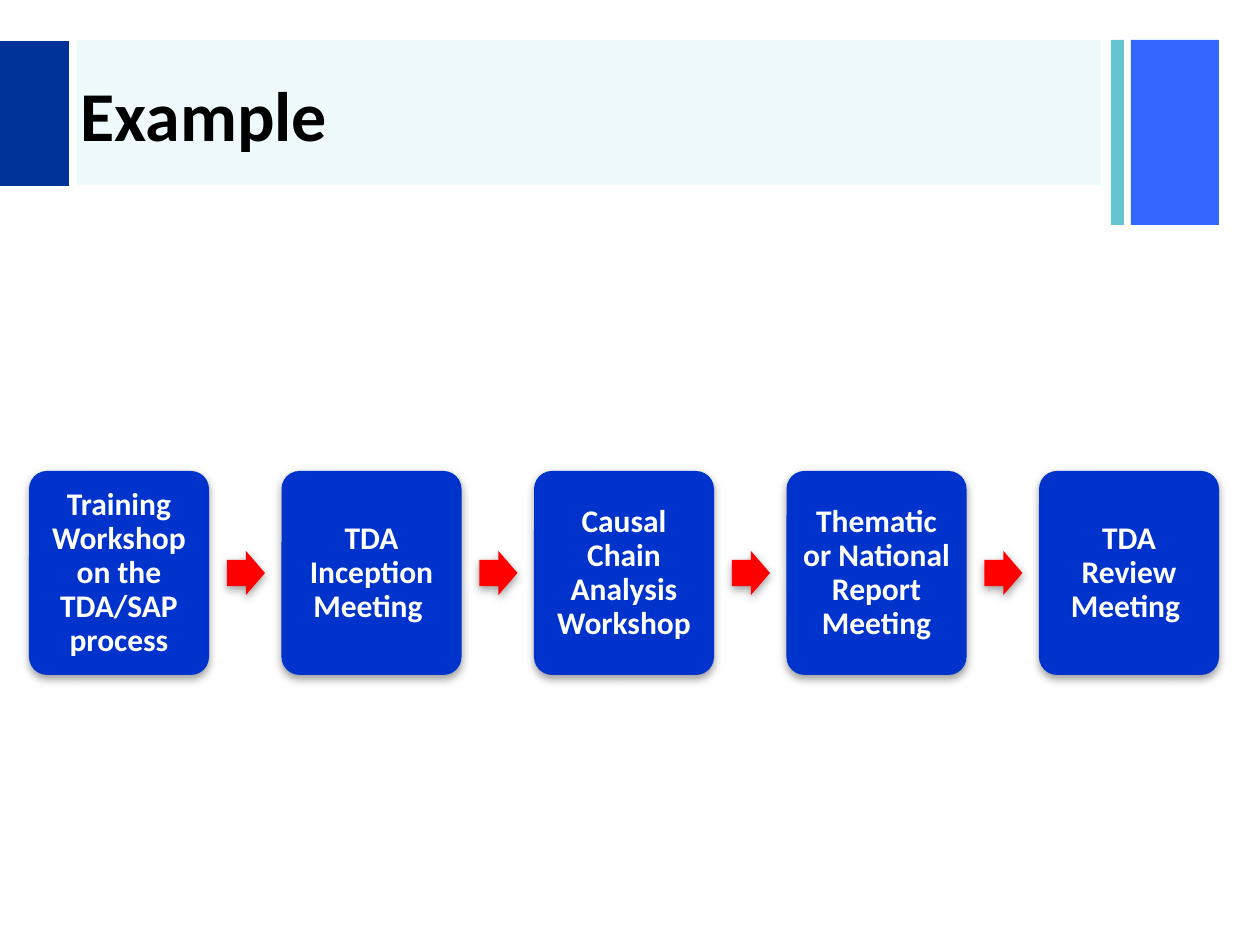
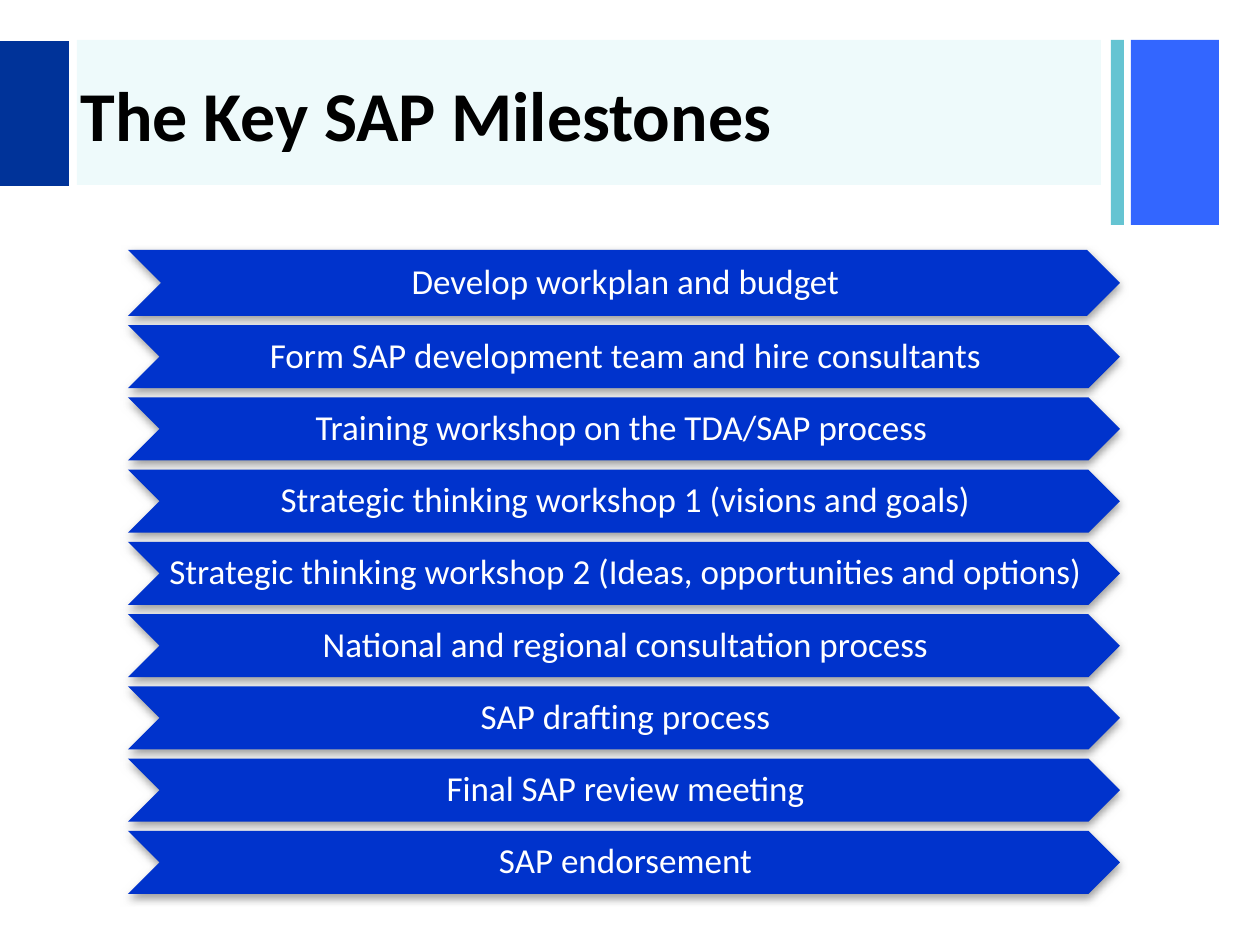
"""Build two slides on the milestones of the TDA and SAP processes."""
from lxml.etree import SubElement
from pptx import Presentation
from pptx.dml.color import RGBColor
from pptx.enum.shapes import MSO_SHAPE
from pptx.enum.text import MSO_ANCHOR, MSO_AUTO_SIZE, PP_ALIGN
from pptx.oxml.ns import qn
from pptx.util import Emu, Inches, Pt

PIXELS_PER_INCH = 126
FONT = "Calibri"
COLORS = {
    "black": "000000", "white": "FFFFFF", "box": "0033CC", "arrow": "FF0000",
    "navy": "003399", "blue": "3366FF", "teal": "65C4D2", "tint": "14C5D0",
    "shadow": "808080",
}

EXAMPLE_TITLE = "Example"
EXAMPLE_STEPS = [
    "Training Workshop on the TDA/SAP process",
    "TDA Inception Meeting ",
    "Causal Chain Analysis Workshop",
    "Thematic or National Report Meeting",
    "TDA Review Meeting ",
]
MILESTONES_TITLE = "The Key SAP Milestones"
MILESTONES = [
    "Develop workplan and budget",
    "Form SAP development team and hire consultants",
    "Training workshop on the TDA/SAP process ",
    "Strategic thinking workshop 1 (visions and goals)",
    "Strategic thinking workshop 2 (Ideas, opportunities and options)",
    "National and regional consultation process",
    "SAP drafting process",
    "Final SAP review meeting",
    "SAP endorsement",
]

BANDS = [
    ((1131, 40, 88, 185), "blue", 100),
    ((1111, 40, 13, 185), "teal", 100),
    ((77, 40, 1024, 145), "tint", 7),
    ((0, 41, 69, 145), "navy", 100),
]
TITLE_BOX = (68, 43, 1042, 141)
STEP_LEFT, STEP_RIGHT, STEP_TOP = 29, 1219, 471
STEP_WIDTH, STEP_HEIGHT = 180, 204
ARROW_OFFSET, ARROW_WIDTH, ARROW_HEIGHT = 18, 38, 44
ROW_LEFT, ROW_TOP, ROW_BOTTOM, ROW_WIDTH = 128, 250, 894, 992
FIRST_ROW_HEIGHT, ROW_HEIGHT = 66, 63


def px(length):
    """Turn pixels into EMU."""
    return Emu(round(length * Inches(1) / PIXELS_PER_INCH))


def place(shape, box):
    """Move and size a shape to a box in pixels."""
    shape.left, shape.top, shape.width, shape.height = map(px, box)


def add_shadow(shape):
    """Add the soft shadow that falls below a shape."""
    effects = shape.element.spPr.find(qn("a:effectLst"))
    shadow = SubElement(effects, qn("a:outerShdw"), blurRad=str(Pt(5)),
                        dist=str(Pt(2)), dir="5400000", rotWithShape="0")
    color = SubElement(shadow, qn("a:srgbClr"), val=COLORS["shadow"])
    SubElement(color, qn("a:alpha"), val="75000")


def add_block(slide, kind, box, color, opacity=100, shadow=False, adjustments=()):
    """Add a filled preset shape without an outline."""
    shape = slide.shapes.add_shape(kind, *map(px, box))
    shape.fill.solid()
    shape.fill.fore_color.rgb = RGBColor.from_string(COLORS[color])
    shape.line.fill.background()
    shape.shadow.inherit = False
    if opacity < 100:
        fill_color = shape.element.spPr.find(qn("a:solidFill"))[0]
        SubElement(fill_color, qn("a:alpha"), val=str(opacity * 1000))
    if shadow:
        add_shadow(shape)
    for index, value in enumerate(adjustments):
        shape.adjustments[index] = value
    return shape


def write(shape, text, size, color="white", bold=False, align=PP_ALIGN.CENTER,
          spacing=0.9, insets=None):
    """Write formatted text, with insets in pixels, into a shape."""
    frame = shape.text_frame
    frame.text = text
    frame.word_wrap = True
    frame.auto_size = MSO_AUTO_SIZE.NONE
    frame.vertical_anchor = MSO_ANCHOR.MIDDLE
    if insets:
        (frame.margin_left, frame.margin_top,
         frame.margin_right, frame.margin_bottom) = map(px, insets)
    paragraph = frame.paragraphs[0]
    paragraph.alignment = align
    paragraph.line_spacing = spacing
    font = paragraph.runs[0].font
    font.name, font.size, font.bold = FONT, Pt(size), bold
    font.color.rgb = RGBColor.from_string(COLORS[color])


def add_slide(presentation, layout, title):
    """Add a slide with its title."""
    slide = presentation.slides.add_slide(layout)
    write(slide.shapes.title, title, 40, color="black", bold=True,
          align=PP_ALIGN.LEFT, spacing=1.0)
    return slide


def style_layout(layout, slide):
    """Give the layout its title position and the bands behind it."""
    place(layout.placeholders[0], TITLE_BOX)
    for position, (box, color, opacity) in enumerate(BANDS, start=2):
        band = add_block(slide, MSO_SHAPE.RECTANGLE, box, color, opacity)
        layout.shapes.element.insert(position, band.element)


def add_steps(slide):
    """Add a row of steps joined by arrows."""
    pitch = (STEP_RIGHT - STEP_LEFT - STEP_WIDTH) / (len(EXAMPLE_STEPS) - 1)
    arrow_top = STEP_TOP + (STEP_HEIGHT - ARROW_HEIGHT) / 2
    for index, text in enumerate(EXAMPLE_STEPS):
        left = STEP_LEFT + index * pitch
        step = add_block(slide, MSO_SHAPE.ROUNDED_RECTANGLE,
                         (left, STEP_TOP, STEP_WIDTH, STEP_HEIGHT), "box",
                         shadow=True, adjustments=[0.1])
        write(step, text, 18, bold=True, insets=(9, 9, 9, 9))
        if index < len(EXAMPLE_STEPS) - 1:
            arrow_left = left + STEP_WIDTH + ARROW_OFFSET
            add_block(slide, MSO_SHAPE.RIGHT_ARROW,
                      (arrow_left, arrow_top, ARROW_WIDTH, ARROW_HEIGHT), "arrow",
                      shadow=True, adjustments=[0.6, 0.5])


def add_milestones(slide):
    """Add a stack of chevrons with equal gaps."""
    heights = [FIRST_ROW_HEIGHT] + [ROW_HEIGHT] * (len(MILESTONES) - 1)
    gap = (ROW_BOTTOM - ROW_TOP - sum(heights)) / (len(MILESTONES) - 1)
    top = ROW_TOP
    for text, height in zip(MILESTONES, heights):
        chevron = add_block(slide, MSO_SHAPE.CHEVRON,
                            (ROW_LEFT, top, ROW_WIDTH, height), "box", shadow=True)
        write(chevron, text, 20, insets=(3, 1, 0, 1))
        top += height + gap


def main():
    """Build and save the presentation."""
    presentation = Presentation()
    presentation.slide_width, presentation.slide_height = px(1260), px(945)
    layout = presentation.slide_layouts.get_by_name("Title Only")
    example = add_slide(presentation, layout, EXAMPLE_TITLE)
    style_layout(layout, example)
    add_steps(example)
    add_milestones(add_slide(presentation, layout, MILESTONES_TITLE))
    presentation.save("out.pptx")


if __name__ == "__main__":
    main()
